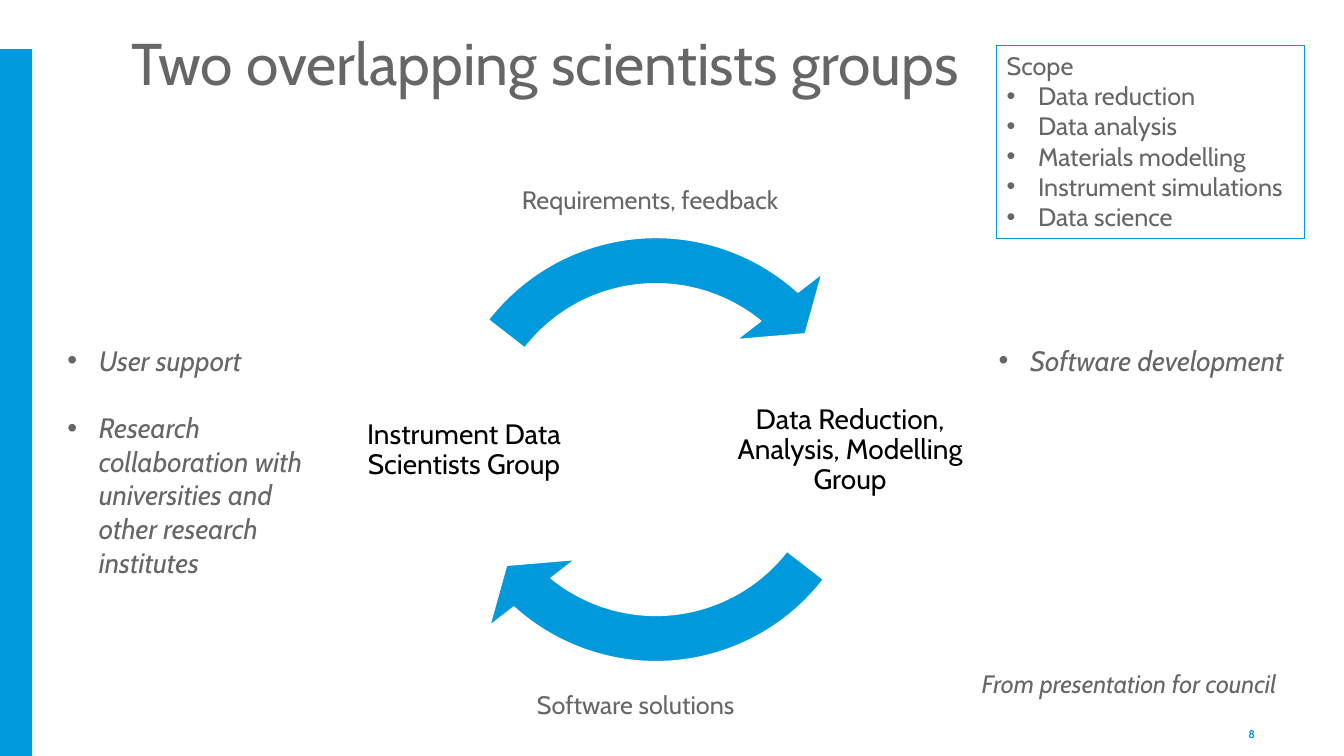
from lxml import etree
from pptx import Presentation
from pptx.dml.color import RGBColor
from pptx.enum.shapes import MSO_SHAPE
from pptx.enum.text import MSO_ANCHOR, MSO_AUTO_SIZE, PP_ALIGN
from pptx.oxml.ns import qn
from pptx.util import Cm, Pt

# Content: boxes are left, top, width, height in cm
COLORS = {"blue": "0099DC", "grey": "666666", "black": "000000", "white": "FFFFFF"}
FONT = "Cabin"
BULLET_INDENT = 0.79

SIDE_BAR = (0, 1.24, 0.81, 17.81)
TITLE = ("Two overlapping scientists groups", (3.07, 0.74, 26.01, 1.83))
PAGE_NUMBER = ("8", (24.26, 17.98, 7.62, 1.02))

GROUP_TOP, GROUP_SIZE = 8.36, 5.97
GROUPS = [
    ("Data Reduction, Analysis, Modelling Group", 18.44),
    ("Instrument Data Scientists Group", 8.71),
]

CYCLE_BOX = (10.41, 5.21, 12.24, 12.24)
ARROW_THICKNESS, ARROW_HEAD_ANGLE, ARROW_HEAD_WIDTH = 0.095, 6.854, 0.111
ARROW_END, ARROW_START = 78.486, 22.66
HALF_TURN = 108  # 180 degrees in adjustment units

LABELS = [
    ("Requirements, feedback", (12.9, 4.52, 7.26, 1.02), False),
    ("Software solutions", (13.28, 17.25, 5.69, 1.02), False),
    ("From presentation for council", (24.49, 16.71, 8.61, 1.02), True),
]
TASKS = [
    (["Software development"], (24.92, 8.53, 8.15, 1.96), False),
    (["User support",
      "Research collaboration with universities and other research institutes"],
     (1.45, 8.53, 7.09, 6.25), True),
]
SCOPE_HEADING = "Scope"
SCOPE_ITEMS = ["Data reduction", "Data analysis", "Materials modelling",
               "Instrument simulations", "Data science"]
SCOPE_BOX = (25.12, 1.14, 7.75, 4.88)


def color(name):
    return RGBColor.from_string(COLORS[name])


def add_shape(slide, kind, box, fill, line=None, width=1):
    shape = slide.shapes.add_shape(kind, *map(Cm, box))
    shape.shadow.inherit = False
    shape.fill.solid()
    shape.fill.fore_color.rgb = color(fill)
    if line:
        shape.line.color.rgb = color(line)
        shape.line.width = Pt(width)
    else:
        shape.line.fill.background()
    return shape


def add_bullet(paragraph):
    properties = paragraph._p.get_or_add_pPr()
    properties.set("marL", str(Cm(BULLET_INDENT)))
    properties.set("indent", str(-Cm(BULLET_INDENT)))
    etree.SubElement(properties, qn("a:buFont")).set("typeface", "Arial")
    etree.SubElement(properties, qn("a:buChar")).set("char", "•")


def write(shape, lines, size, ink="grey", bold=False, italic=False, wrap=True,
          bullets_from=None, align=PP_ALIGN.LEFT, anchor=MSO_ANCHOR.TOP,
          spacing=None, gap=0):
    frame = shape.text_frame
    frame.text = "\n".join(lines)
    frame.word_wrap = wrap
    frame.auto_size = MSO_AUTO_SIZE.NONE
    frame.vertical_anchor = anchor
    for index, paragraph in enumerate(frame.paragraphs):
        if bullets_from is not None and index >= bullets_from:
            add_bullet(paragraph)
        paragraph.alignment = align
        if spacing:
            paragraph.line_spacing = spacing
        if index and gap:
            paragraph.space_before = Pt(gap)
        for run in paragraph.runs:
            run.font.name = FONT
            run.font.size = Pt(size)
            run.font.bold = bold
            run.font.italic = italic
            run.font.color.rgb = color(ink)
    return frame


def add_text(slide, box, lines, size, **style):
    return write(slide.shapes.add_textbox(*map(Cm, box)), lines, size, **style)


def main():
    presentation = Presentation()
    presentation.slide_width, presentation.slide_height = Cm(33.87), Cm(19.05)
    slide = presentation.slides.add_slide(presentation.slide_layouts[6])

    # Side bar, title and page number
    add_shape(slide, MSO_SHAPE.RECTANGLE, SIDE_BAR, "blue")
    text, box = TITLE
    title_frame = add_text(slide, box, [text], 42, spacing=0.9)
    title_frame.margin_bottom = Cm(0.05)
    text, box = PAGE_NUMBER
    add_text(slide, box, [text], 8, ink="blue", bold=True,
             align=PP_ALIGN.RIGHT, anchor=MSO_ANCHOR.MIDDLE)

    # Cycle: two groups and the arrows half a turn apart
    for turn, (text, left) in enumerate(GROUPS):
        frame = add_text(slide, (left, GROUP_TOP, GROUP_SIZE, GROUP_SIZE), [text], 20,
                         ink="black", align=PP_ALIGN.CENTER,
                         anchor=MSO_ANCHOR.MIDDLE, spacing=0.9)
        frame.margin_left = frame.margin_right = Cm(0.08)
        frame.margin_top = frame.margin_bottom = Cm(0.08)
        arrow = add_shape(slide, MSO_SHAPE.CIRCULAR_ARROW, CYCLE_BOX, "blue", "white")
        values = (ARROW_THICKNESS, ARROW_HEAD_ANGLE, ARROW_END + turn * HALF_TURN,
                  ARROW_START + turn * HALF_TURN, ARROW_HEAD_WIDTH)
        for index, value in enumerate(values):
            arrow.adjustments[index] = value

    # Labels and task lists
    for text, box, italic in LABELS:
        add_text(slide, box, [text], 18, italic=italic, wrap=False)
    for lines, box, wrap in TASKS:
        add_text(slide, box, lines, 20, italic=True, wrap=wrap, bullets_from=0, gap=24)

    # Scope box
    scope = add_shape(slide, MSO_SHAPE.RECTANGLE, SCOPE_BOX, "white", "blue", 0.75)
    write(scope, [SCOPE_HEADING, *SCOPE_ITEMS], 18, wrap=False, bullets_from=1)

    presentation.save("out.pptx")


if __name__ == "__main__":
    main()
